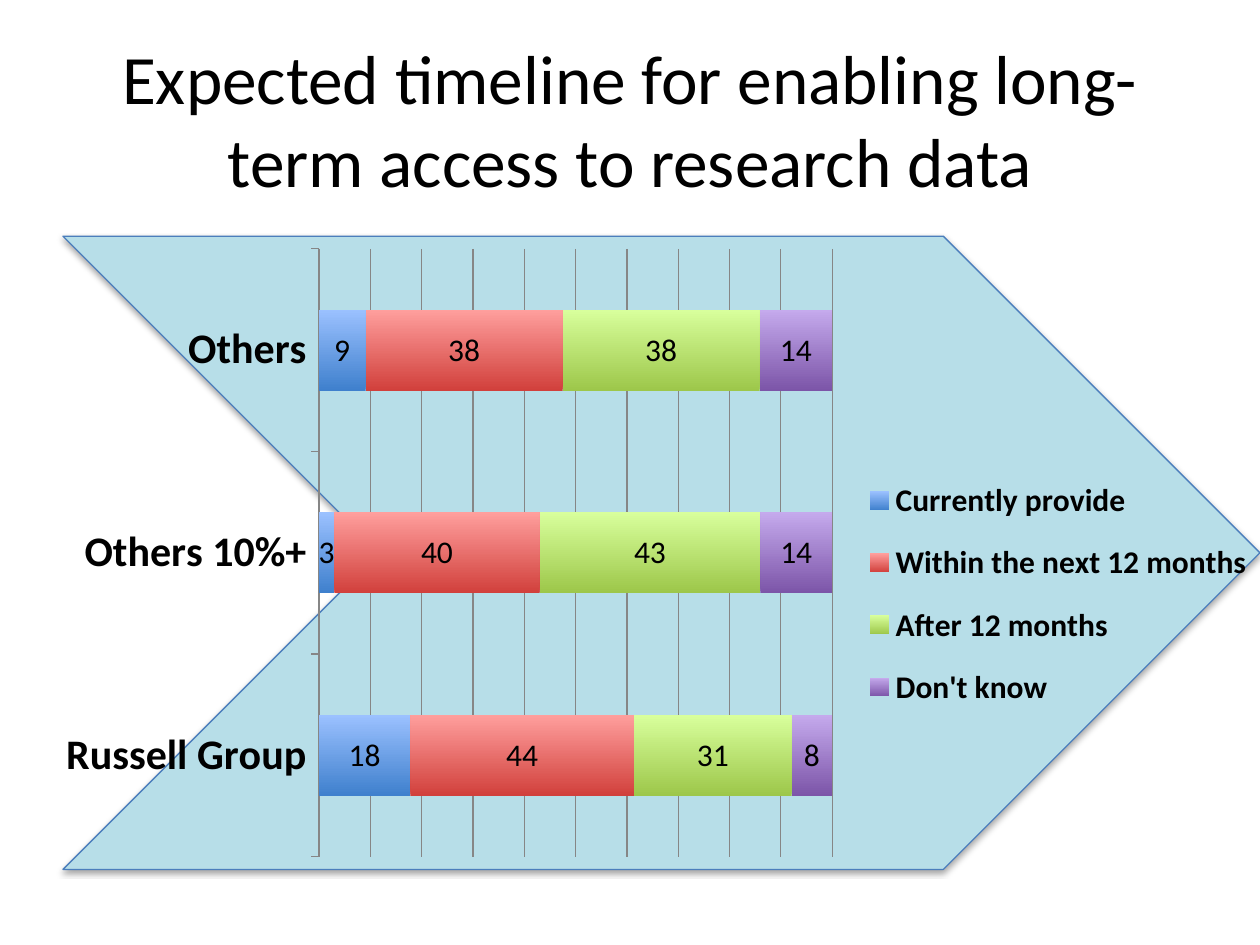
import pptx
import pptx.chart.data
import pptx.dml.color
import pptx.enum.chart
import pptx.enum.shapes
import pptx.enum.text
import pptx.oxml
import pptx.oxml.ns
import pptx.util

COLORS = {
    "text": "000000",
    "arrow": "B7DEE8",
    "arrow_line": "4B7EBC",
    "axis": "868686",
}
CATEGORIES = ["Russell Group", "Others 10%+", "Others"]
# Name, values, bottom colour and top colour of each series
SERIES = [
    ("Currently provide", (18, 3, 9), "3F80CD", "9BC1FF"),
    ("Within the next 12 months", (44, 40, 38), "D1403C", "FF9F9D"),
    ("After 12 months", (31, 43, 38), "9DC74A", "D8FF9C"),
    ("Don't know", (8, 14, 14), "7C55A8", "C5AAED"),
]
SHADOW = (
    "<a:effectLst %s>"
    '<a:outerShdw blurRad="40000" dist="23000" dir="5400000" rotWithShape="0">'
    '<a:srgbClr val="000000"><a:alpha val="35000"/></a:srgbClr>'
    "</a:outerShdw></a:effectLst>" % pptx.oxml.ns.nsdecls("a")
)


def rgb(value):
    return pptx.dml.color.RGBColor.from_string(value)


def manual_layout(x, y, width, height, inner=False):
    """Return a chart layout element placed by shares of the chart's size."""
    target = '<c:layoutTarget val="inner"/>' if inner else ""
    return pptx.oxml.parse_xml(
        f'<c:layout {pptx.oxml.ns.nsdecls("c")}><c:manualLayout>{target}'
        '<c:xMode val="edge"/><c:yMode val="edge"/>'
        f'<c:x val="{x}"/><c:y val="{y}"/><c:w val="{width}"/><c:h val="{height}"/>'
        "</c:manualLayout></c:layout>"
    )


class SlideBuilder:
    """Holds the style and the current slide; boxes are shares of the slide's size."""

    font_name = "Calibri"

    def __init__(self, presentation):
        self.size = presentation.slide_width, presentation.slide_height
        self.slide = presentation.slides.add_slide(presentation.slide_layouts[5])

    def box(self, left, top, width, height):
        slide_width, slide_height = self.size
        return (int(left * slide_width), int(top * slide_height),
                int(width * slide_width), int(height * slide_height))

    def style_font(self, font, size, bold=False):
        font.name = self.font_name
        font.size = pptx.util.Pt(size)
        font.bold = bold
        font.color.rgb = rgb(COLORS["text"])

    def title(self, text, box):
        shape = self.slide.shapes.title
        shape.left, shape.top, shape.width, shape.height = self.box(*box)
        frame = shape.text_frame
        frame.word_wrap = True
        frame.vertical_anchor = pptx.enum.text.MSO_ANCHOR.MIDDLE
        paragraph = frame.paragraphs[0]
        paragraph.alignment = pptx.enum.text.PP_ALIGN.CENTER
        run = paragraph.add_run()
        run.text = text
        self.style_font(run.font, 39.6)

    def chevron(self, box):
        shape = self.slide.shapes.add_shape(
            pptx.enum.shapes.MSO_SHAPE.CHEVRON, *self.box(*box))
        shape.fill.solid()
        shape.fill.fore_color.rgb = rgb(COLORS["arrow"])
        shape.line.color.rgb = rgb(COLORS["arrow_line"])
        shape.line.width = pptx.util.Pt(0.75)
        shape.element.spPr.append(pptx.oxml.parse_xml(SHADOW))

    def stacked_chart(self, box):
        data = pptx.chart.data.CategoryChartData()
        data.categories = CATEGORIES
        for name, values, *_ in SERIES:
            data.add_series(name, values)
        chart = self.slide.shapes.add_chart(
            pptx.enum.chart.XL_CHART_TYPE.BAR_STACKED_100, *self.box(*box), data).chart
        chart.has_title = False
        self.style_font(chart.font, 10)
        self.style_plot(chart.plots[0])
        self.style_axes(chart)
        self.style_legend(chart)
        plot_area = chart.element.find(".//" + pptx.oxml.ns.qn("c:plotArea"))
        for layout in plot_area.findall(pptx.oxml.ns.qn("c:layout")):
            plot_area.remove(layout)
        plot_area.insert(0, manual_layout(0.23, 0.02, 0.42, 0.96, inner=True))

    def style_plot(self, plot):
        plot.gap_width = 150
        plot.overlap = 100
        plot.vary_by_categories = False
        for series, (_, _, bottom, top) in zip(plot.series, SERIES):
            fill = series.format.fill
            fill.gradient()
            fill.gradient_angle = 90
            for stop, color in zip(fill.gradient_stops, (bottom, top)):
                stop.color.rgb = rgb(color)
            series.format.line.fill.background()
            labels = series.data_labels
            labels.show_value = True
            self.style_font(labels.font, 18)

    def style_axes(self, chart):
        category_axis, value_axis = chart.category_axis, chart.value_axis
        category_axis.has_major_gridlines = False
        category_axis.major_tick_mark = pptx.enum.chart.XL_TICK_MARK.OUTSIDE
        self.style_font(category_axis.tick_labels.font, 24, bold=True)
        value_axis.has_major_gridlines = True
        value_axis.visible = False
        for line in (category_axis.format.line, value_axis.major_gridlines.format.line):
            line.color.rgb = rgb(COLORS["axis"])
            line.width = pptx.util.Pt(0.75)

    def style_legend(self, chart):
        chart.has_legend = True
        legend = chart.legend
        legend.position = pptx.enum.chart.XL_LEGEND_POSITION.RIGHT
        legend.include_in_layout = False
        self.style_font(legend.font, 18, bold=True)
        element = chart.element.find(".//" + pptx.oxml.ns.qn("c:legend"))
        for layout in element.findall(pptx.oxml.ns.qn("c:layout")):
            element.remove(layout)
        position = element.find(pptx.oxml.ns.qn("c:legendPos"))
        position.addnext(manual_layout(0.67, 0.35, 0.33, 0.43))


def main():
    presentation = pptx.Presentation()
    presentation.slide_width = pptx.util.Inches(10)
    presentation.slide_height = pptx.util.Inches(7.5)
    builder = SlideBuilder(presentation)
    builder.title("Expected timeline for enabling long-term access to research data",
                  (0.05, 0.04, 0.9, 0.17))
    builder.chevron((0.05, 0.25, 0.95, 0.67))
    builder.stacked_chart((0.03, 0.25, 0.97, 0.67))
    presentation.save("out.pptx")


if __name__ == "__main__":
    main()
